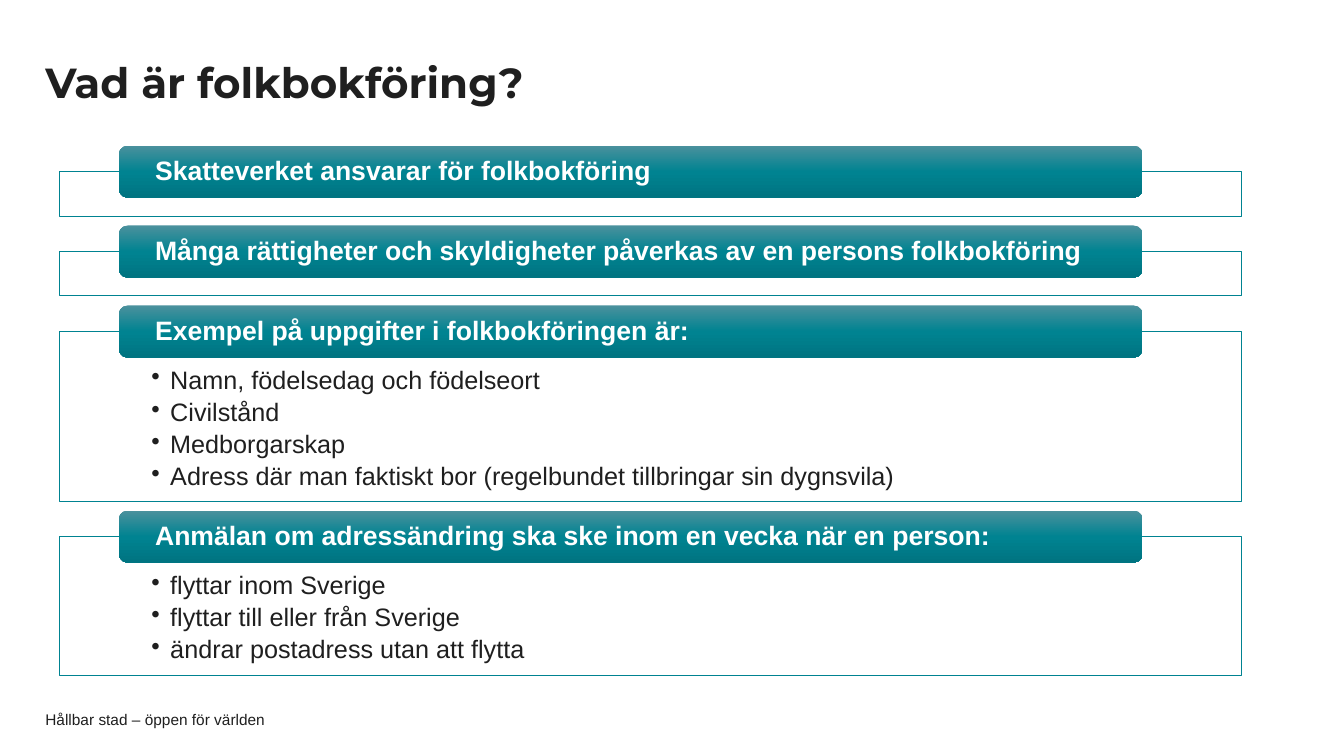
"""Build the slide about population registration."""
from copy import deepcopy
from lxml import etree
from pptx import Presentation
from pptx.dml.color import RGBColor
from pptx.enum import shapes, text
from pptx.oxml.ns import qn
from pptx.util import Pt

TITLE = "Vad är folkbokföring?"
FOOTER = "Hållbar stad – öppen för världen"
TOPICS = [
    ("Skatteverket ansvarar för folkbokföring", []),
    ("Många rättigheter och skyldigheter påverkas av en persons folkbokföring", []),
    ("Exempel på uppgifter i folkbokföringen är:", [
        "Namn, födelsedag och födelseort",
        "Civilstånd",
        "Medborgarskap",
        "Adress där man faktiskt bor (regelbundet tillbringar sin dygnsvila)",
    ]),
    ("Anmälan om adressändring ska ske inom en vecka när en person:", [
        "flyttar inom Sverige",
        "flyttar till eller från Sverige",
        "ändrar postadress utan att flytta",
    ]),
]
INK, WHITE, TEAL = "1F1F1F", "FFFFFF", "008391"
SHADES = [(0, "4B919D"), (0.5, TEAL), (1, "007481")]
BOX_X, BOX_W = 42.6, 844.4
BAR_X, BAR_W, BAR_H = 85, 731, 37.2
TOP, GAP, BARE, HEAD, LINE = 122.6, 25.4, 31.7, 33.1, 22


def paint(color, code):
    color.rgb = RGBColor.from_string(code)


def write(shape, lines, size=18, color=INK, font="Arial", bold=False, bullet=False,
          space=1.0, after=0, inset=(0, 0, 0, 0), anchor=text.MSO_ANCHOR.MIDDLE):
    frame = shape.text_frame
    frame.word_wrap = True
    frame.auto_size = text.MSO_AUTO_SIZE.NONE
    frame.vertical_anchor = anchor
    (frame.margin_left, frame.margin_top,
     frame.margin_right, frame.margin_bottom) = map(Pt, inset)
    frame.text = "\n".join(lines)
    for para in frame.paragraphs:
        para.alignment = text.PP_ALIGN.LEFT
        para.line_spacing = space
        para.space_after = Pt(after)
        if bullet:
            props = para._p.get_or_add_pPr()
            props.set("marL", str(Pt(13.5)))
            props.set("indent", str(Pt(-13.5)))
            etree.SubElement(props, qn("a:buChar")).set("char", "•")
        for run in para.runs:
            run.font.size, run.font.name, run.font.bold = Pt(size), font, bold
            paint(run.font.color, color)


def add(slide, kind, x, y, w, h):
    shape = slide.shapes.add_shape(kind, Pt(x), Pt(y), Pt(w), Pt(h))
    shape.shadow.inherit = False
    return shape


def add_box(slide, top, high, items):
    box = add(slide, shapes.MSO_SHAPE.RECTANGLE, BOX_X, top, BOX_W, high)
    box.fill.solid()
    paint(box.fill.fore_color, WHITE)
    tint = box._element.spPr.find(qn("a:solidFill"))[0]
    etree.SubElement(tint, qn("a:alpha")).set("val", "90000")
    box.line.width = Pt(0.5)
    paint(box.line.color, TEAL)
    if items:
        write(box, items, bullet=True, space=0.9, after=3.5,
              inset=(65.5, 26, 65.5, 10), anchor=text.MSO_ANCHOR.TOP)


def add_bar(slide, mid, label):
    bar = add(slide, shapes.MSO_SHAPE.ROUNDED_RECTANGLE,
              BAR_X, mid - BAR_H / 2, BAR_W, BAR_H)
    bar.line.fill.background()
    bar.fill.gradient()
    bar.fill.gradient_angle = 270
    first = next(bar._element.spPr.iter(qn("a:gs")))
    first.addnext(deepcopy(first))
    for stop, (place, code) in zip(bar.fill.gradient_stops, SHADES):
        stop.position = place
        paint(stop.color, code)
    write(bar, [label], size=19, color=WHITE, bold=True, space=0.9,
          inset=(24, 0, 24, 0))


def main():
    deck = Presentation()
    deck.slide_width, deck.slide_height = Pt(960), Pt(540)
    slide = deck.slides.add_slide(deck.slide_layouts[5])
    title = slide.shapes.title
    title.left, title.top, title.width, title.height = map(Pt, (32.4, 31.7, 722, 58.3))
    write(title, [TITLE], size=30, font="Montserrat", bold=True, space=0.9,
          inset=(0, 3.6, 0, 3.6))
    top = TOP
    for label, items in TOPICS:
        high = HEAD + LINE * len(items) if items else BARE
        add_box(slide, top, high, items)
        add_bar(slide, top, label)
        top += high + GAP
    foot = slide.shapes.add_textbox(Pt(32.4), Pt(508.3), Pt(680), Pt(11.5))
    write(foot, [FOOTER], size=11)
    deck.save("out.pptx")


if __name__ == "__main__":
    main()
